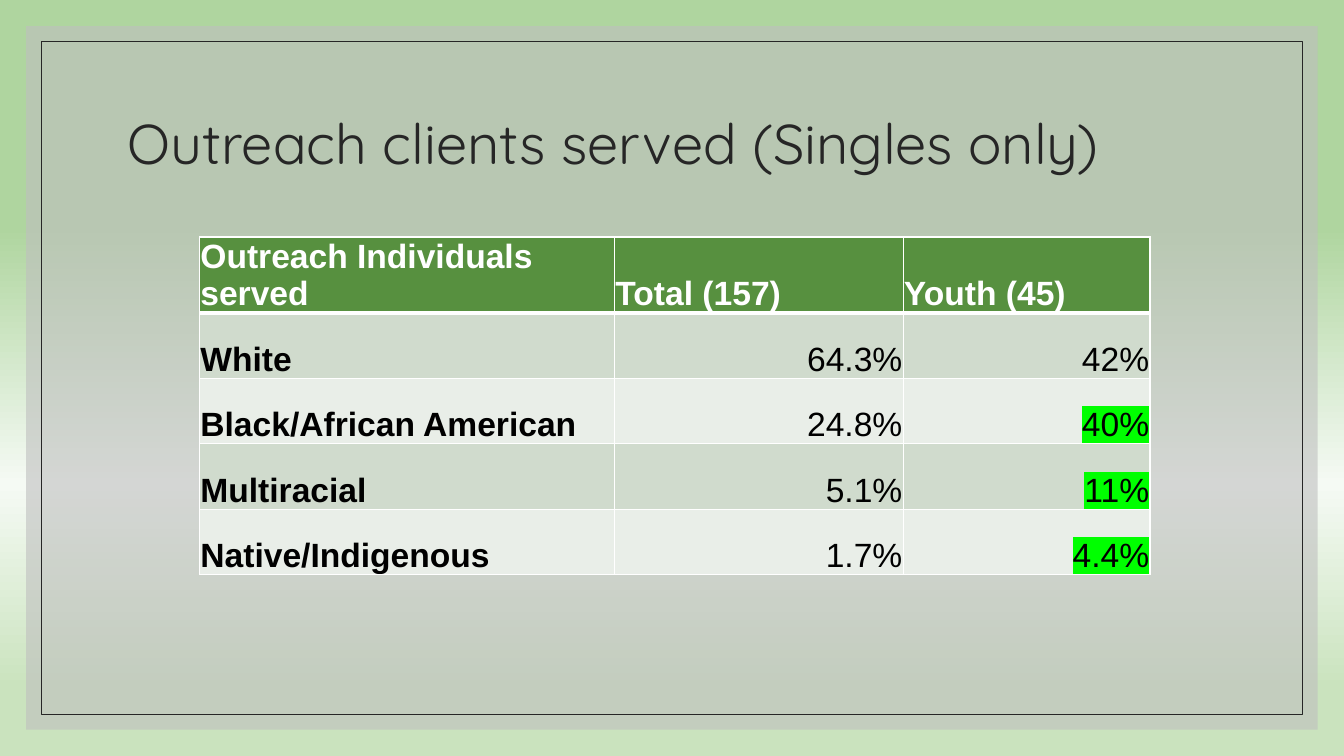
from dataclasses import dataclass

from lxml.etree import SubElement
from pptx import Presentation
from pptx.dml.color import RGBColor
from pptx.enum.shapes import MSO_SHAPE
from pptx.enum.text import MSO_ANCHOR, MSO_AUTO_SIZE, PP_ALIGN
from pptx.oxml.ns import qn
from pptx.util import Cm, Pt

BLACK = RGBColor(0x00, 0x00, 0x00)
WHITE = RGBColor(0xFF, 0xFF, 0xFF)
INK = RGBColor(0x26, 0x26, 0x26)
PANEL_GREY = RGBColor(0xBF, 0xBF, 0xBF)
HEADER_GREEN = RGBColor(0x57, 0x90, 0x3F)
BAND_DARK = RGBColor(0xD0, 0xDB, 0xCD)
BAND_LIGHT = RGBColor(0xE9, 0xEE, 0xE8)
HIGHLIGHT = RGBColor(0x00, 0xFF, 0x00)
BACKDROP_STOPS = (
    (0, RGBColor(0xAF, 0xD5, 0x9F)),
    (30, RGBColor(0xAF, 0xD5, 0x9F)),
    (64, RGBColor(0xF5, 0xFA, 0xF4)),
    (91, RGBColor(0xCA, 0xE3, 0xBE)),
    (100, RGBColor(0xCA, 0xE3, 0xBE)),
)

SLIDE_WIDTH, SLIDE_HEIGHT = Cm(33.87), Cm(19.05)
COLUMN_WIDTHS = (Cm(10.46), Cm(7.27), Cm(6.22))
ROW_HEIGHT = Cm(1.65)
CELL_INSET = Cm(0.02)


@dataclass(frozen=True)
class ServedGroup:
    name: str
    total: str
    youth: str
    highlighted: bool = True


HEADINGS = ("Outreach Individuals served", "Total (157)", "Youth (45)")
GROUPS = (
    ServedGroup("White", "64.3%", "42%", highlighted=False),
    ServedGroup("Black/African American", "24.8%", "40%"),
    ServedGroup("Multiracial", "5.1%", "11%"),
    ServedGroup("Native/Indigenous", "1.7%", "4.4%"),
)


def add_colour(parent, colour: RGBColor) -> None:
    SubElement(parent, qn("a:srgbClr"), val=str(colour))


def paint_backdrop(slide) -> None:
    fill = slide.background.fill
    fill.gradient()
    fill.gradient_angle = 270
    stop_list = next(slide.element.iter(qn("a:gsLst")))
    for stop in list(stop_list):
        stop_list.remove(stop)
    for percent, colour in BACKDROP_STOPS:
        add_colour(SubElement(stop_list, qn("a:gs"), pos=str(percent * 1000)), colour)


def add_frame(slide, margin: Cm):
    """Add a centred rectangle behind the title."""
    frame = slide.shapes.add_shape(
        MSO_SHAPE.RECTANGLE, margin, margin,
        SLIDE_WIDTH - 2 * margin, SLIDE_HEIGHT - 2 * margin)
    frame.shadow.inherit = False
    slide.shapes.title.element.addprevious(frame.element)
    return frame


def format_title(title, text: str) -> None:
    title.left, title.top, title.width, title.height = Cm(2.97), Cm(1.78), Cm(27.94), Cm(3.81)
    frame = title.text_frame
    frame.text = text
    frame.word_wrap = True
    frame.auto_size = MSO_AUTO_SIZE.NONE
    frame.vertical_anchor = MSO_ANCHOR.MIDDLE
    paragraph = frame.paragraphs[0]
    paragraph.alignment = PP_ALIGN.LEFT
    paragraph.line_spacing = 0.9
    font = paragraph.runs[0].font
    font.name, font.size, font.color.rgb = "Quicksand", Pt(40), INK


def add_borders(cell, top: Pt, bottom: Pt) -> None:
    properties = cell._tc.get_or_add_tcPr()
    widths = {"a:lnL": Pt(1), "a:lnR": Pt(1), "a:lnT": top, "a:lnB": bottom}
    for index, (tag, width) in enumerate(widths.items()):
        line = SubElement(properties, qn(tag), w=str(width))
        add_colour(SubElement(line, qn("a:solidFill")), WHITE)
        properties.insert(index, line)  # Borders precede the fill


def format_cell(cell, text: str, fill: RGBColor, colour: RGBColor,
                bold: bool, alignment: PP_ALIGN, highlighted: bool) -> None:
    cell.text_frame.text = text
    cell.fill.solid()
    cell.fill.fore_color.rgb = fill
    cell.vertical_anchor = MSO_ANCHOR.BOTTOM
    cell.margin_left = cell.margin_top = cell.margin_right = CELL_INSET
    cell.margin_bottom = 0
    paragraph = cell.text_frame.paragraphs[0]
    paragraph.alignment = alignment
    run = paragraph.runs[0]
    font = run.font
    font.size, font.bold, font.color.rgb = Pt(24), bold, colour
    if highlighted:
        properties = run._r.get_or_add_rPr()
        add_colour(SubElement(properties, qn("a:highlight")), HIGHLIGHT)
    font.name = "Arial"


def add_served_table(slide) -> None:
    row_count = len(GROUPS) + 1
    table = slide.shapes.add_table(
        row_count, len(HEADINGS), Cm(5.03), Cm(5.97),
        sum(COLUMN_WIDTHS), ROW_HEIGHT * row_count).table
    for column, width in zip(table.columns, COLUMN_WIDTHS):
        column.width = width
    for row in table.rows:
        row.height = ROW_HEIGHT

    # Header row
    for column, heading in enumerate(HEADINGS):
        cell = table.cell(0, column)
        format_cell(cell, heading, HEADER_GREEN, WHITE, True, PP_ALIGN.LEFT, False)
        add_borders(cell, Pt(1), Pt(3))

    # One banded row per group
    for row, group in enumerate(GROUPS, start=1):
        band = BAND_DARK if row % 2 else BAND_LIGHT
        for column, text in enumerate((group.name, group.total, group.youth)):
            cell = table.cell(row, column)
            is_name = column == 0
            format_cell(cell, text, band, BLACK, is_name,
                        PP_ALIGN.LEFT if is_name else PP_ALIGN.RIGHT,
                        group.highlighted and column == 2)
            add_borders(cell, Pt(3) if row == 1 else Pt(1), Pt(1))


def main() -> None:
    presentation = Presentation()
    presentation.slide_width, presentation.slide_height = SLIDE_WIDTH, SLIDE_HEIGHT
    slide = presentation.slides.add_slide(presentation.slide_layouts[5])
    paint_backdrop(slide)

    # Translucent panel
    panel = add_frame(slide, Cm(0.66))
    panel.fill.solid()
    panel.fill.fore_color.rgb = PANEL_GREY
    panel_colour = next(panel.element.spPr.iter(qn("a:srgbClr")))
    SubElement(panel_colour, qn("a:alpha"), val="60000")
    panel.line.fill.background()

    # Thin outline
    outline = add_frame(slide, Cm(1.04))
    outline.fill.background()
    outline.line.color.rgb = INK
    outline.line.width = Pt(0.75)

    format_title(slide.shapes.title, "Outreach clients served (Singles only)")
    add_served_table(slide)
    presentation.save("out.pptx")


if __name__ == "__main__":
    main()
